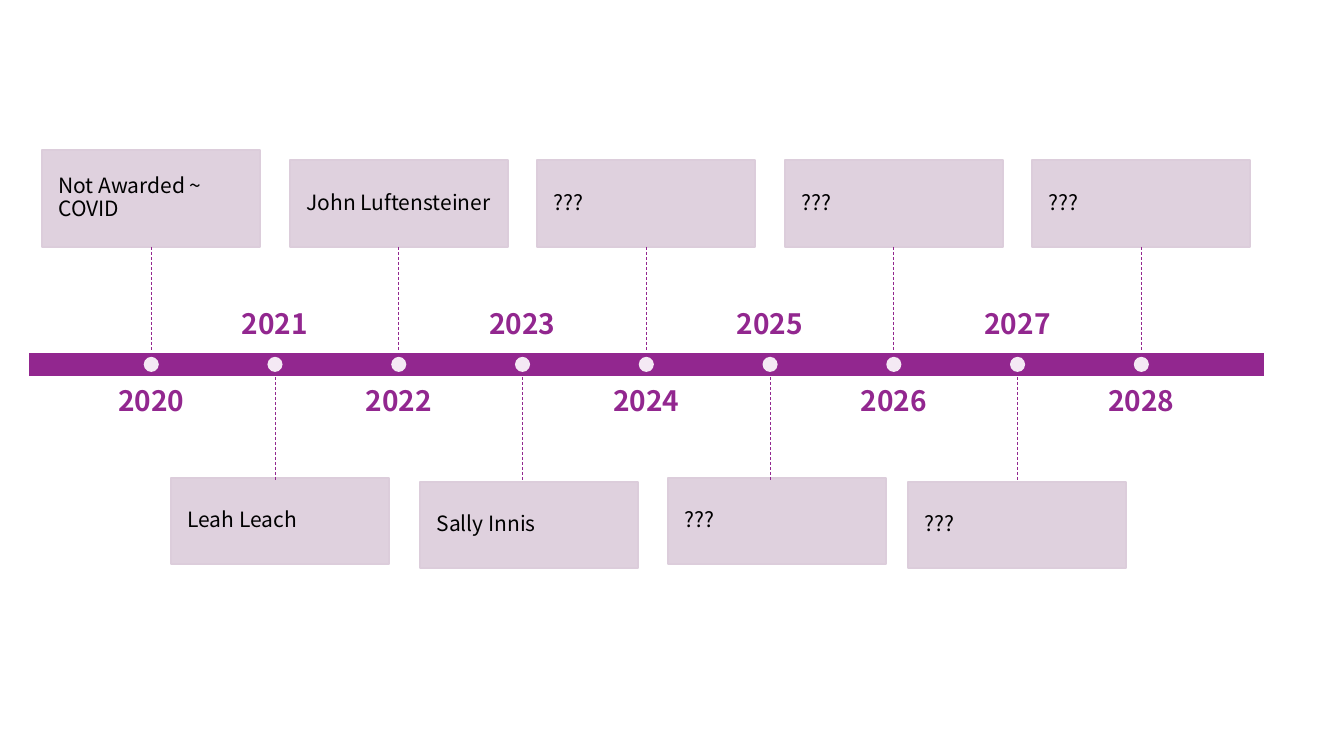
"""Build a timeline slide of yearly award recipients."""
from lxml import etree
from pptx import Presentation
from pptx.dml.color import RGBColor
from pptx.enum.dml import MSO_LINE
from pptx.enum.shapes import MSO_CONNECTOR, MSO_SHAPE
from pptx.enum.text import MSO_ANCHOR, PP_ALIGN
from pptx.oxml.ns import qn
from pptx.util import Inches, Pt

FONT = "Noto Sans CJK JP"
PURPLE = "92278F"
LILAC = "DCCDDB"
WHITE = "FFFFFF"
BLACK = "000000"

FIRST_YEAR = 2020
FIRST_X, LAST_X = 1.5, 11.32
BAR_TOP, BAR_H = 3.49, 0.25
BAR_BOTTOM = BAR_TOP + BAR_H
STEM = 1.04
CARD_W = 2.16
YEAR_W, YEAR_H = 1.96, 0.69
DOT = 0.15

# Recipient, card left, card top, card height
AWARDS = [
    ("Not Awarded ~ COVID", 0.42, 1.49, 0.96),
    ("Leah Leach", 1.7, 4.74, 0.86),
    ("John Luftensteiner", 2.88, 1.59, 0.86),
    ("Sally Innis", 4.17, 4.78, 0.86),
    ("???", 5.33, 1.59, 0.86),
    ("???", 6.63, 4.74, 0.86),
    ("???", 7.79, 1.59, 0.86),
    ("???", 9.01, 4.78, 0.86),
    ("???", 10.24, 1.59, 0.86),
]


def paint(color_format, color, alpha=100):
    """Set a colour from a hex string, with opacity in percent."""
    color_format.rgb = RGBColor.from_string(color)
    if alpha < 100:
        for clr in color_format._xFill.iter(qn("a:srgbClr")):
            etree.SubElement(clr, qn("a:alpha")).set("val", str(alpha * 1000))


def add_block(s, kind, box, fill, line=None, alpha=100):
    """Add a filled preset shape with an optional outline."""
    sp = s.shapes.add_shape(kind, *map(Inches, box))
    sp.shadow.inherit = False
    sp.fill.solid()
    paint(sp.fill.fore_color, fill, alpha)
    if line:
        sp.line.width = Pt(1.5)
        sp.line.fill.solid()
        paint(sp.line.color, line)
    else:
        sp.line.fill.background()
    return sp


def write(sp, text, size, color, anchor, align, inset=0, bold=False):
    """Write one paragraph into a shape."""
    tf = sp.text_frame
    tf.word_wrap = True
    tf.vertical_anchor = anchor
    tf.margin_left = tf.margin_right = Inches(inset)
    tf.margin_top = tf.margin_bottom = Inches(inset)
    p = tf.paragraphs[0]
    p.text = text
    p.alignment = align
    p.line_spacing = 0.9
    p.font.name = FONT
    p.font.size = Pt(size)
    p.font.bold = bold
    paint(p.font.color, color)


def add_card(s, name, left, top, height):
    """Add a recipient card."""
    box = (left, top, CARD_W, height)
    sp = add_block(s, MSO_SHAPE.RECTANGLE, box, LILAC, LILAC, 90)
    write(sp, name, 15, BLACK, MSO_ANCHOR.MIDDLE, PP_ALIGN.LEFT, 0.16)


def add_year(s, year, x, top, anchor):
    """Add a year label centred on x."""
    box = (x - YEAR_W / 2, top, YEAR_W, YEAR_H)
    sp = s.shapes.add_textbox(*map(Inches, box))
    write(sp, str(year), 20, PURPLE, anchor, PP_ALIGN.CENTER, bold=True)


def add_stem(s, x, top):
    """Add a dashed vertical line between the bar and a card."""
    ends = (x, top, x, top + STEM)
    cxn = s.shapes.add_connector(MSO_CONNECTOR.STRAIGHT, *map(Inches, ends))
    cxn.line.width = Pt(0.5)
    cxn.line.dash_style = MSO_LINE.DASH
    paint(cxn.line.color, PURPLE)
    etree.SubElement(cxn._element.spPr, qn("a:effectLst"))


def add_dot(s, x):
    """Add a marker on the bar."""
    box = (x - DOT / 2, BAR_TOP + (BAR_H - DOT) / 2, DOT, DOT)
    add_block(s, MSO_SHAPE.OVAL, box, WHITE, alpha=90)


def main():
    """Build and save the slide."""
    prs = Presentation()
    prs.slide_width, prs.slide_height = Inches(13.33), Inches(7.5)
    s = prs.slides.add_slide(prs.slide_layouts[6])
    bar = (0.28, BAR_TOP, 12.27, BAR_H)
    add_block(s, MSO_SHAPE.RECTANGLE, bar, PURPLE, WHITE)
    step = (LAST_X - FIRST_X) / (len(AWARDS) - 1)
    for i, award in enumerate(AWARDS):
        x = FIRST_X + i * step
        add_card(s, *award)
        if i % 2 == 0:
            add_stem(s, x, BAR_TOP - STEM)
            add_year(s, FIRST_YEAR + i, x, 3.84, MSO_ANCHOR.TOP)
        else:
            add_stem(s, x, BAR_BOTTOM)
            add_year(s, FIRST_YEAR + i, x, 2.69, MSO_ANCHOR.BOTTOM)
        add_dot(s, x)
    prs.save("out.pptx")


if __name__ == "__main__":
    main()
